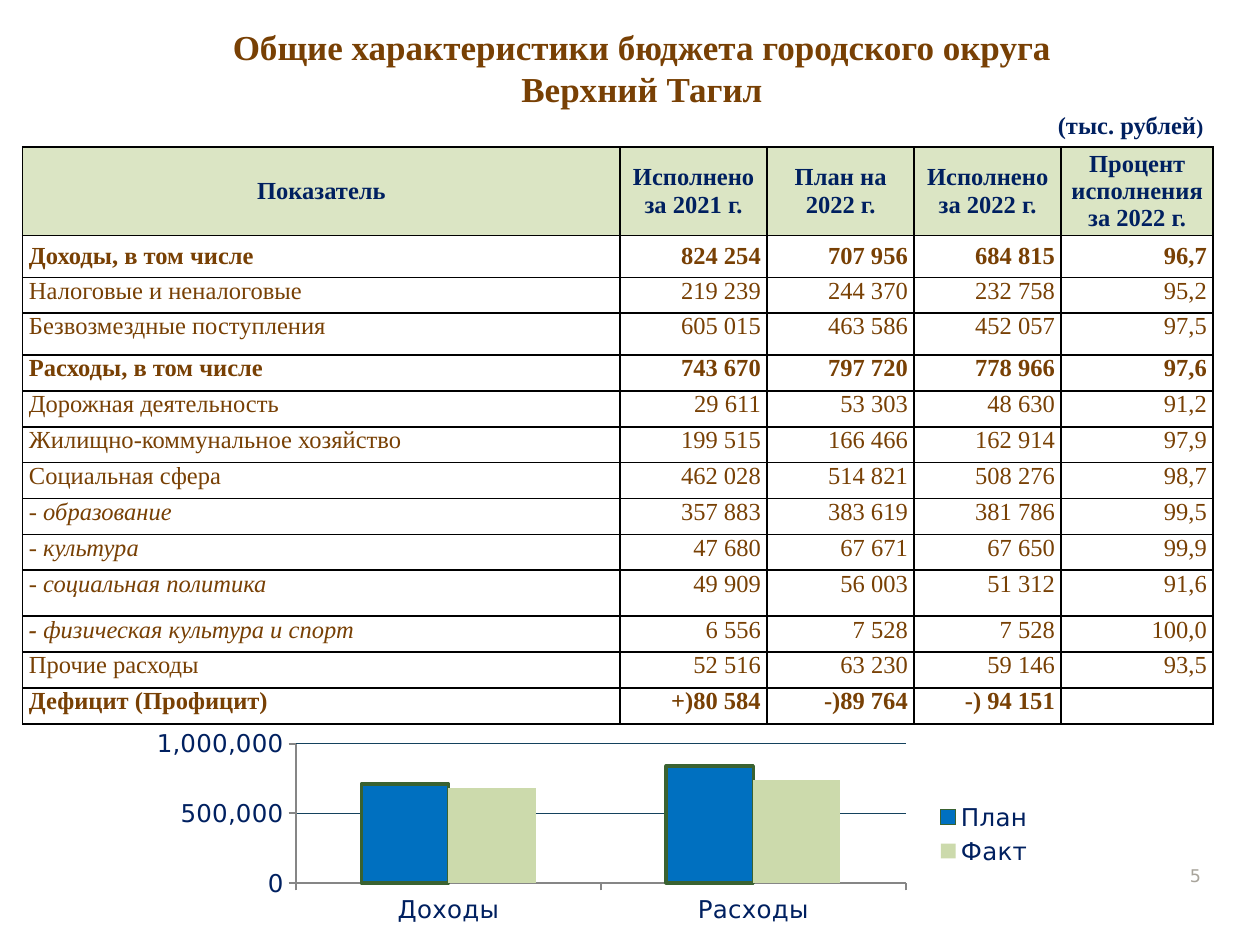
from lxml.etree import SubElement
from pptx import Presentation
from pptx.chart.data import CategoryChartData
from pptx.dml.color import RGBColor
from pptx.enum.chart import XL_CHART_TYPE, XL_LEGEND_POSITION, XL_TICK_MARK
from pptx.enum.text import MSO_ANCHOR, MSO_AUTO_SIZE, PP_ALIGN
from pptx.oxml import parse_xml
from pptx.oxml.ns import nsdecls, qn
from pptx.util import Inches, Pt

BROWN = RGBColor(0x78, 0x40, 0x04)
NAVY = RGBColor(0x00, 0x20, 0x60)
GREY = RGBColor(0xA8, 0xA4, 0x9B)
AXIS_GREY = RGBColor(0x86, 0x86, 0x86)
GRID_BLUE = RGBColor(0x14, 0x42, 0x5D)
PLAN_BLUE = RGBColor(0x00, 0x70, 0xC0)
PLAN_EDGE = RGBColor(0x3A, 0x62, 0x31)
LIGHT_GREEN = RGBColor(0xCC, 0xDA, 0xAC)
BLACK = RGBColor(0x00, 0x00, 0x00)

HEADER = ["Показатель", "Исполнено за 2021 г.", "План на 2022 г.",
          "Исполнено за 2022 г.", "Процент исполнения за 2022 г."]
BUDGET = [
    ["Доходы, в том числе", "824 254", "707 956", "684 815", "96,7"],
    ["Налоговые и неналоговые", "219 239", "244 370", "232 758", "95,2"],
    ["Безвозмездные поступления", "605 015", "463 586", "452 057", "97,5"],
    ["Расходы, в том числе", "743 670", "797 720", "778 966", "97,6"],
    ["Дорожная деятельность", "29 611", "53 303", "48 630", "91,2"],
    ["Жилищно-коммунальное хозяйство", "199 515", "166 466", "162 914", "97,9"],
    ["Социальная сфера", "462 028", "514 821", "508 276", "98,7"],
    ["- образование", "357 883", "383 619", "381 786", "99,5"],
    ["- культура", "47 680", "67 671", "67 650", "99,9"],
    ["- социальная политика", "49 909", "56 003", "51 312", "91,6"],
    ["- физическая культура и спорт", "6 556", "7 528", "7 528", "100,0"],
    ["Прочие расходы", "52 516", "63 230", "59 146", "93,5"],
    ["Дефицит (Профицит)", "+)80 584", "-)89 764", "-) 94 151", ""],
]
TOTALS = ("Доходы", "Расходы", "Дефицит")
COLUMN_WIDTHS = [47.42, 11.67, 11.67, 11.67, 12.06]
ROW_HEIGHTS = [6.46, 3.33, 2.85, 3.33] + [2.85] * 6 + [3.65] + [2.85] * 3


class BudgetSlide:
    serif = "Times New Roman"
    sans = "DejaVu Sans"
    unit = Inches(0.1)

    def __init__(self, presentation):
        self.slide = presentation.slides.add_slide(presentation.slide_layouts[5])

    def grid(self, *units):
        return [round(value * self.unit) for value in units]

    def set_font(self, font, size, color, name, bold=False, italic=False):
        font.size, font.name, font.bold, font.italic = Pt(size), name, bold, italic
        font.color.rgb = color

    def title(self, lines, note, area):
        shape = self.slide.shapes.title
        shape.left, shape.top, shape.width, shape.height = self.grid(*area)
        frame = shape.text_frame
        frame.word_wrap = True
        frame.auto_size = MSO_AUTO_SIZE.SHAPE_TO_FIT_TEXT
        frame.vertical_anchor = MSO_ANCHOR.TOP
        frame.text = "\n".join(lines)
        for paragraph in frame.paragraphs:
            paragraph.alignment = PP_ALIGN.CENTER
            self.set_font(paragraph.font, 20, BROWN, self.serif, True)
        first = frame.paragraphs[0]._p.get_or_add_pPr()
        first.set("marL", str(Inches(0.12)))
        paragraph = frame.add_paragraph()
        paragraph.alignment = PP_ALIGN.RIGHT
        for text, size in note:
            run = paragraph.add_run()
            run.text = text
            self.set_font(run.font, size, NAVY, self.serif, True)

    def page_number(self, text, area):
        frame = self.slide.shapes.add_textbox(*self.grid(*area)).text_frame
        frame.word_wrap = True
        frame.vertical_anchor = MSO_ANCHOR.BOTTOM
        paragraph = frame.paragraphs[0]
        paragraph.text = text
        paragraph.alignment = PP_ALIGN.RIGHT
        self.set_font(paragraph.font, 10, GREY, self.sans)

    def cell_borders(self, cell):
        properties = cell._tc.get_or_add_tcPr()
        for position, side in enumerate(("lnL", "lnR", "lnT", "lnB")):
            properties.insert(position, parse_xml(
                f'<a:{side} {nsdecls("a")} w="{Pt(1)}"><a:solidFill>'
                f'<a:srgbClr val="{BLACK}"/></a:solidFill></a:{side}>'))

    def cell(self, cell, text, align, anchor, color, bold, italic=False):
        cell.margin_left = cell.margin_right = Inches(0.05)
        cell.margin_top = cell.margin_bottom = 0
        cell.vertical_anchor = anchor
        cell.fill.background()
        self.cell_borders(cell)
        paragraph = cell.text_frame.paragraphs[0]
        paragraph.text = text
        paragraph.alignment = align
        self.set_font(paragraph.font, 14, color, self.serif, bold, italic)

    def header_cell(self, cell, text):
        self.cell(cell, text, PP_ALIGN.CENTER, MSO_ANCHOR.MIDDLE, NAVY, True)
        cell.fill.solid()
        cell.fill.fore_color.rgb = LIGHT_GREEN
        color = cell._tc.tcPr.find(qn("a:solidFill")).find(qn("a:srgbClr"))
        SubElement(color, qn("a:alpha")).set("val", "70000")

    def table(self, left, top):
        area = self.grid(left, top, sum(COLUMN_WIDTHS), sum(ROW_HEIGHTS))
        table = self.slide.shapes.add_table(len(ROW_HEIGHTS), len(HEADER), *area).table
        for column, width in zip(table.columns, self.grid(*COLUMN_WIDTHS)):
            column.width = width
        for row, height in zip(table.rows, self.grid(*ROW_HEIGHTS)):
            row.height = height
        for index, text in enumerate(HEADER):
            self.header_cell(table.cell(0, index), text)
        for row, values in enumerate(BUDGET, start=1):
            label = values[0]
            anchor = MSO_ANCHOR.MIDDLE if row == 1 else MSO_ANCHOR.TOP
            for column, text in enumerate(values):
                self.cell(table.cell(row, column), text,
                          PP_ALIGN.RIGHT if column else PP_ALIGN.LEFT, anchor, BROWN,
                          label.startswith(TOTALS),
                          column == 0 and label.startswith("-"))
        self.bold_dash(table.cell(11, 0).text_frame.paragraphs[0])

    def bold_dash(self, paragraph):
        run = paragraph.runs[0]
        dash, label = run.text[:2], run.text[2:]
        run.text = dash
        run.font.bold = True
        paragraph.add_run().text = label

    def axis(self, axis):
        axis.major_tick_mark = XL_TICK_MARK.OUTSIDE
        axis.format.line.color.rgb = AXIS_GREY
        axis.format.line.width = Pt(1)
        self.set_font(axis.tick_labels.font, 14, NAVY, self.sans)

    def chart(self, categories, series, area, plot_area):
        data = CategoryChartData(number_format="#,##0")
        data.categories = categories
        for name, values in series:
            data.add_series(name, values)
        chart = self.slide.shapes.add_chart(
            XL_CHART_TYPE.COLUMN_CLUSTERED, *self.grid(*area), data).chart
        chart.has_title = False
        self.set_font(chart.font, 14, NAVY, self.sans)
        chart.has_legend = True
        chart.legend.position = XL_LEGEND_POSITION.RIGHT
        chart.legend.include_in_layout = False
        self.set_font(chart.legend.font, 14, NAVY, self.sans)
        self.axis(chart.category_axis)
        values = chart.value_axis
        self.axis(values)
        values.minimum_scale, values.maximum_scale, values.major_unit = 0, 1000000, 500000
        values.tick_labels.number_format = "#,##0"
        values.tick_labels.number_format_is_linked = False
        values.major_gridlines.format.line.color.rgb = GRID_BLUE
        values.major_gridlines.format.line.width = Pt(0.75)
        plot = chart.plots[0]
        plot.gap_width, plot.overlap, plot.vary_by_categories = 150, 0, False
        for item, color in zip(plot.series, (PLAN_BLUE, LIGHT_GREEN)):
            item.format.fill.solid()
            item.format.fill.fore_color.rgb = color
        plot.series[0].format.line.color.rgb = PLAN_EDGE
        plot.series[0].format.line.width = Pt(2)
        width, height = area[2:]
        self.plot_layout(chart, [length / side for length, side
                                 in zip(plot_area, (width, height) * 2)])

    def plot_layout(self, chart, shares):
        plot_area = chart._chartSpace.chart.plotArea
        for layout in plot_area.findall(qn("c:layout")):
            plot_area.remove(layout)
        settings = [("layoutTarget", "inner"), ("xMode", "edge"), ("yMode", "edge"),
                    *zip("xywh", shares)]
        entries = "".join(f'<c:{tag} val="{value}"/>' for tag, value in settings)
        plot_area.insert(0, parse_xml(
            f'<c:layout {nsdecls("c")}><c:manualLayout>{entries}</c:manualLayout></c:layout>'))


def main():
    presentation = Presentation()
    presentation.slide_width, presentation.slide_height = Inches(10), Inches(7.5)
    budget = BudgetSlide(presentation)
    budget.page_number("5", (91.3, 66.8, 5, 4))
    budget.chart(["Доходы", "Расходы"],
                 [("План", (710000, 840000)), ("Факт", (680000, 740000))],
                 (10.9, 57.5, 72.1, 17.4), (12.6, 1.53, 48.4, 11.05))
    budget.table(1.8, 11.67)
    budget.title(["Общие характеристики бюджета городского округа", "Верхний Тагил"],
                 [("(тыс. рублей", 14), (")", 12)], (4.2, 1.55, 92.3, 10.1))
    presentation.save("out.pptx")


if __name__ == "__main__":
    main()
